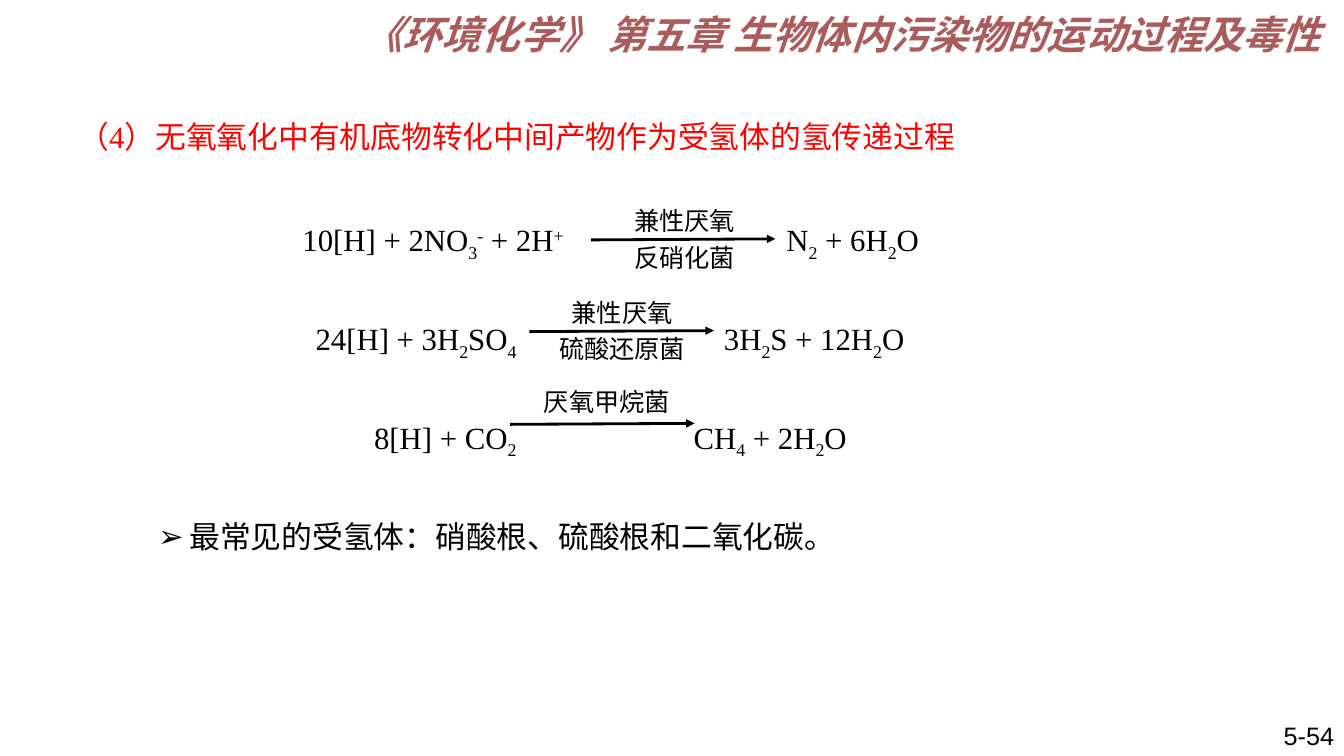
from lxml import etree
from pptx import Presentation
from pptx.dml.color import RGBColor
from pptx.enum.shapes import MSO_CONNECTOR
from pptx.enum.text import MSO_ANCHOR, PP_ALIGN
from pptx.oxml.ns import qn
from pptx.util import Inches, Pt

BLACK = RGBColor(0, 0, 0)
RED = RGBColor(255, 0, 0)
ROSE = RGBColor(0xAA, 0x5C, 0x5C)
LEFT, CENTER, RIGHT = PP_ALIGN.LEFT, PP_ALIGN.CENTER, PP_ALIGN.RIGHT
TOP, MIDDLE, BOTTOM = MSO_ANCHOR.TOP, MSO_ANCHOR.MIDDLE, MSO_ANCHOR.BOTTOM
STRAIGHT = MSO_CONNECTOR.STRAIGHT
SONG = "Noto Sans CJK SC"
TITLE = "Noto Sans CJK JP"
ROMAN = "Times New Roman"
SUB, SUP = -25000, 30000

REACTIONS = [
    {
        "left": (3.0, [("10[H] + 2NO", 0), ("3", SUB), ("-", SUP),
                       (" + 2H", 0), ("+", SUP)]),
        "right": (7.8, [("N", 0), ("2", SUB), (" + 6H", 0), ("2", SUB), ("O", 0)]),
        "mid": 2.4,
        "arrow": (5.86, 2.38),
        "label": (6.79, 2.34, ["兼性厌氧", "反硝化菌"]),
    },
    {
        "left": (3.13, [("24[H] + 3H", 0), ("2", SUB), ("SO", 0), ("4", SUB)]),
        "right": (7.18, [("3H", 0), ("2", SUB), ("S + 12H", 0), ("2", SUB), ("O", 0)]),
        "mid": 3.38,
        "arrow": (5.25, 3.29),
        "label": (6.17, 3.25, ["兼性厌氧", "硫酸还原菌"]),
    },
    {
        "left": (3.71, [("8[H] + CO", 0), ("2", SUB)]),
        "right": (6.88, [("CH", 0), ("4", SUB), (" + 2H", 0), ("2", SUB), ("O", 0)]),
        "mid": 4.36,
        "arrow": (5.06, 4.21),
        "label": (6.02, 3.95, ["厌氧甲烷菌"]),
    },
]


def style(run, size, face, color):
    run.font.size = Pt(size)
    run.font.name = face
    run.font.color.rgb = color
    east = etree.SubElement(run._r.get_or_add_rPr(), qn("a:ea"))
    east.set("typeface", SONG if face == ROMAN else face)


def add_box(slide, place, anchor, wrap=True):
    box = slide.shapes.add_textbox(*[Inches(n) for n in place])
    frame = box.text_frame
    frame.word_wrap = wrap
    frame.vertical_anchor = anchor
    return frame


def add_text(slide, place, lines, size, face, color=BLACK,
             align=LEFT, anchor=TOP, wrap=True, pitch=1.0):
    frame = add_box(slide, place, anchor, wrap)
    frame.text = "\n".join(lines)
    for para in frame.paragraphs:
        para.alignment = align
        para.line_spacing = pitch
        for run in para.runs:
            style(run, size, face, color)
    return frame.paragraphs[0]


def add_formula(slide, left, mid, parts):
    frame = add_box(slide, (left, mid - 0.25, 2.75, 0.5), MIDDLE, False)
    frame.margin_left = frame.margin_right = 0
    para = frame.paragraphs[0]
    for text, shift in parts:
        run = para.add_run()
        run.text = text
        style(run, 22, ROMAN, BLACK)
        if shift:
            run._r.get_or_add_rPr().set("baseline", str(shift))


def add_arrow(slide, left, top):
    arrow = slide.shapes.add_connector(
        STRAIGHT, Inches(left), Inches(top), Inches(left + 1.83), Inches(top - 0.01))
    arrow.line.color.rgb = BLACK
    arrow.line.width = Pt(2)
    tip = etree.SubElement(arrow.line._get_or_add_ln(), qn("a:tailEnd"))
    tip.set("type", "triangle")
    etree.SubElement(arrow._element.spPr, qn("a:effectLst"))


def add_reaction(slide, item):
    for side in ("left", "right"):
        left, parts = item[side]
        add_formula(slide, left, item["mid"], parts)
    add_arrow(slide, *item["arrow"])
    center, mid, lines = item["label"]
    add_text(slide, (center - 0.8, mid - 0.42, 1.6, 0.84), lines, 18, SONG,
             align=CENTER, anchor=MIDDLE, wrap=False, pitch=1.2)


def add_bullet(para):
    props = para._p.get_or_add_pPr()
    props.set("marL", str(Inches(0.31)))
    props.set("indent", str(-Inches(0.31)))
    etree.SubElement(props, qn("a:buFont")).set("typeface", "Arial")
    etree.SubElement(props, qn("a:buChar")).set("char", "➢")


def main():
    deck = Presentation()
    deck.slide_width = Inches(13.33)
    deck.slide_height = Inches(7.5)
    slide = deck.slides.add_slide(deck.slide_layouts[6])

    title = add_text(slide, (3.2, 0.05, 10, 0.57),
                     ["《环境化学》 第五章 生物体内污染物的运动过程及毒性"],
                     28, TITLE, ROSE, RIGHT)
    title.runs[0].font.bold = True
    title.runs[0].font.italic = True

    add_text(slide, (0.68, 1.12, 9.21, 0.47),
             ["（4）无氧氧化中有机底物转化中间产物作为受氢体的氢传递过程"],
             22, ROMAN, RED, anchor=BOTTOM, pitch=0.9)

    for item in REACTIONS:
        add_reaction(slide, item)

    note = add_text(slide, (1.47, 5.09, 6.97, 0.47),
                    ["最常见的受氢体：硝酸根、硫酸根和二氧化碳。"], 22, SONG)
    add_bullet(note)
    add_text(slide, (10.33, 7.1, 3, 0.4), ["5-54"], 18, "Arial",
             align=RIGHT, anchor=MIDDLE)
    deck.save("out.pptx")


if __name__ == "__main__":
    main()
